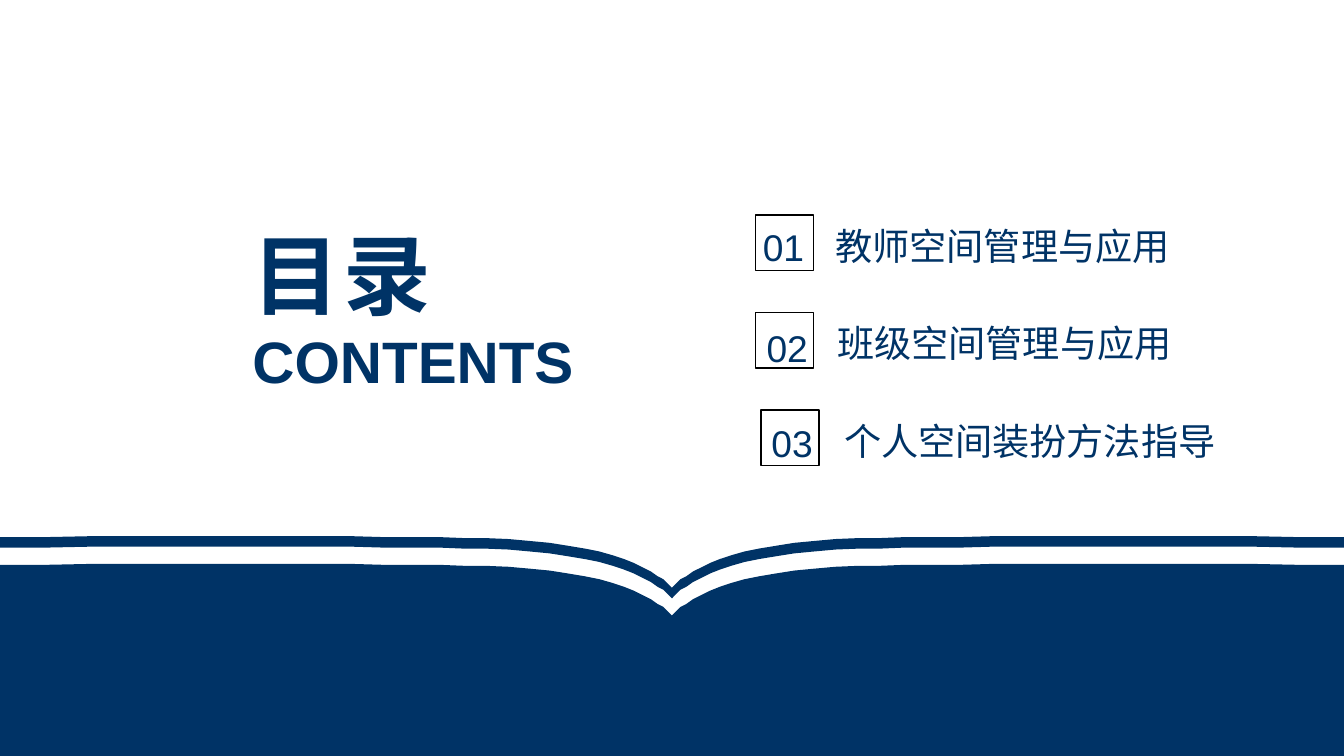
from dataclasses import dataclass

from lxml.etree import SubElement
from pptx import Presentation
from pptx.dml.color import RGBColor
from pptx.enum.shapes import MSO_SHAPE
from pptx.enum.text import MSO_ANCHOR, MSO_AUTO_SIZE, PP_ALIGN
from pptx.oxml.ns import qn
from pptx.util import Inches, Pt


@dataclass(frozen=True)
class Theme:
    """Colours, font and type sizes of the deck."""
    navy: RGBColor = RGBColor(0x00, 0x33, 0x66)
    black: RGBColor = RGBColor(0x00, 0x00, 0x00)
    font: str = "Arial"
    title: int = 66
    subtitle: int = 44
    entry: int = 28


THEME = Theme()
WIDTH, HEIGHT = 14.06, 7.91
COMPARISON_LAYOUT = 4
ROW_PITCH = 1.02

ENTRIES = [
    ("01", "教师空间管理与应用", 7.9, (-0.03, 0.01), 0.74),
    ("02", "班级空间管理与应用", 7.9, (0.01, 0.05), 0.76),
    ("03", "个人空间装扮方法指导", 7.96, (0, 0.02), 0.77),
]

PAGE_EDGE = [
    (0, 0.01), (0.47, 0.01), (0.95, 0), (2.5, 0), (3.68, 0), (4.02, 0.01),
    (4.6, 0.01), (4.85, 0.02), (5.07, 0.02), (5.32, 0.03), (5.54, 0.05),
    (5.75, 0.07), (5.94, 0.1), (6.12, 0.13), (6.27, 0.16), (6.41, 0.2),
    (6.53, 0.24), (6.63, 0.28), (6.73, 0.33), (6.81, 0.37), (6.88, 0.42),
    (6.94, 0.45), (6.99, 0.5), (7.03, 0.54),
]


def place(s, left, top, width, height):
    """Move and size a shape, in inches."""
    s.left, s.top = Inches(left), Inches(top)
    s.width, s.height = Inches(width), Inches(height)


def write(s, text, size, bold=False, align=PP_ALIGN.LEFT, spacing=0):
    """Write one formatted line of text into a shape."""
    tf = s.text_frame
    tf.word_wrap = True
    tf.auto_size = MSO_AUTO_SIZE.SHAPE_TO_FIT_TEXT
    tf.vertical_anchor = MSO_ANCHOR.TOP
    p = tf.paragraphs[0]
    p.alignment, p.line_spacing, p.space_before = align, 1.2, Pt(0)
    pPr = p._p.get_or_add_pPr()
    pPr.set("marL", "0")
    pPr.set("indent", "0")
    SubElement(pPr, qn("a:buNone"))
    r = p.add_run()
    r.text = text
    r.font.name, r.font.size, r.font.bold = THEME.font, Pt(size), bold
    r.font.color.rgb = THEME.navy
    if spacing:
        r._r.get_or_add_rPr().set("spc", str(spacing * 100))


def add_outline(slide, points):
    """Add a closed navy outline through points given in inches."""
    start, *rest = [(Inches(x), Inches(y)) for x, y in points]
    builder = slide.shapes.build_freeform(*start)
    builder.add_line_segments(rest, close=True)
    s = builder.convert_to_shape()
    s.shadow.inherit = False
    s.fill.solid()
    s.fill.fore_color.rgb = THEME.navy
    s.line.fill.background()


def add_book(slide, left, top, width, height):
    """Draw the open book: a thin page band above a solid page block."""
    half = [(left + x, top + y) for x, y in PAGE_EDGE]
    edge = half + [(2 * left + width - x, y) for x, y in reversed(half[:-1])]

    def lowered(drop):
        return [(x, y + drop) for x, y in edge]

    bottom = top + height
    add_outline(slide, lowered(0.29) + [(left + width, bottom), (left, bottom)])
    add_outline(slide, edge + lowered(0.11)[::-1])


def add_heading(title, subtitle, left, top):
    """Set the heading and its English line below."""
    place(title, left, top, 2.71, 1.32)
    write(title, "目录", THEME.title, bold=True, spacing=3)
    place(subtitle, left, top + 1.17, 3.66, 0.91)
    write(subtitle, "CONTENTS", THEME.subtitle, bold=True)


def add_entry(slide, body, entry, top):
    """Set one contents row: framed number and chapter name."""
    number, name, left, (dx, dy), indent = entry
    frame = slide.shapes.add_shape(
        MSO_SHAPE.RECTANGLE, Inches(left), Inches(top + 0.06), Inches(0.61), Inches(0.58))
    frame.shadow.inherit = False
    frame.fill.background()
    frame.line.color.rgb = THEME.black
    frame.line.width = Pt(1)
    label = slide.shapes.add_textbox(
        Inches(left + dx), Inches(top + dy), Inches(0.64), Inches(0.61))
    write(label, number, THEME.entry, align=PP_ALIGN.RIGHT)
    place(body, left + indent, top, 4.29, 0.62)
    write(body, name, THEME.entry)


def add_contents_slide(prs):
    """Build the contents slide."""
    slide = prs.slides.add_slide(prs.slide_layouts[COMPARISON_LAYOUT])
    title, subtitle, *bodies = list(slide.placeholders)
    add_book(slide, 0, 5.61, WIDTH, HEIGHT - 5.61)
    add_heading(title, subtitle, 2.54, 2.04)
    for i, (body, entry) in enumerate(zip(bodies, ENTRIES)):
        add_entry(slide, body, entry, 2.19 + i * ROW_PITCH)


def main():
    """Create and save the deck."""
    prs = Presentation()
    prs.slide_width, prs.slide_height = Inches(WIDTH), Inches(HEIGHT)
    add_contents_slide(prs)
    prs.save("out.pptx")


if __name__ == "__main__":
    main()
